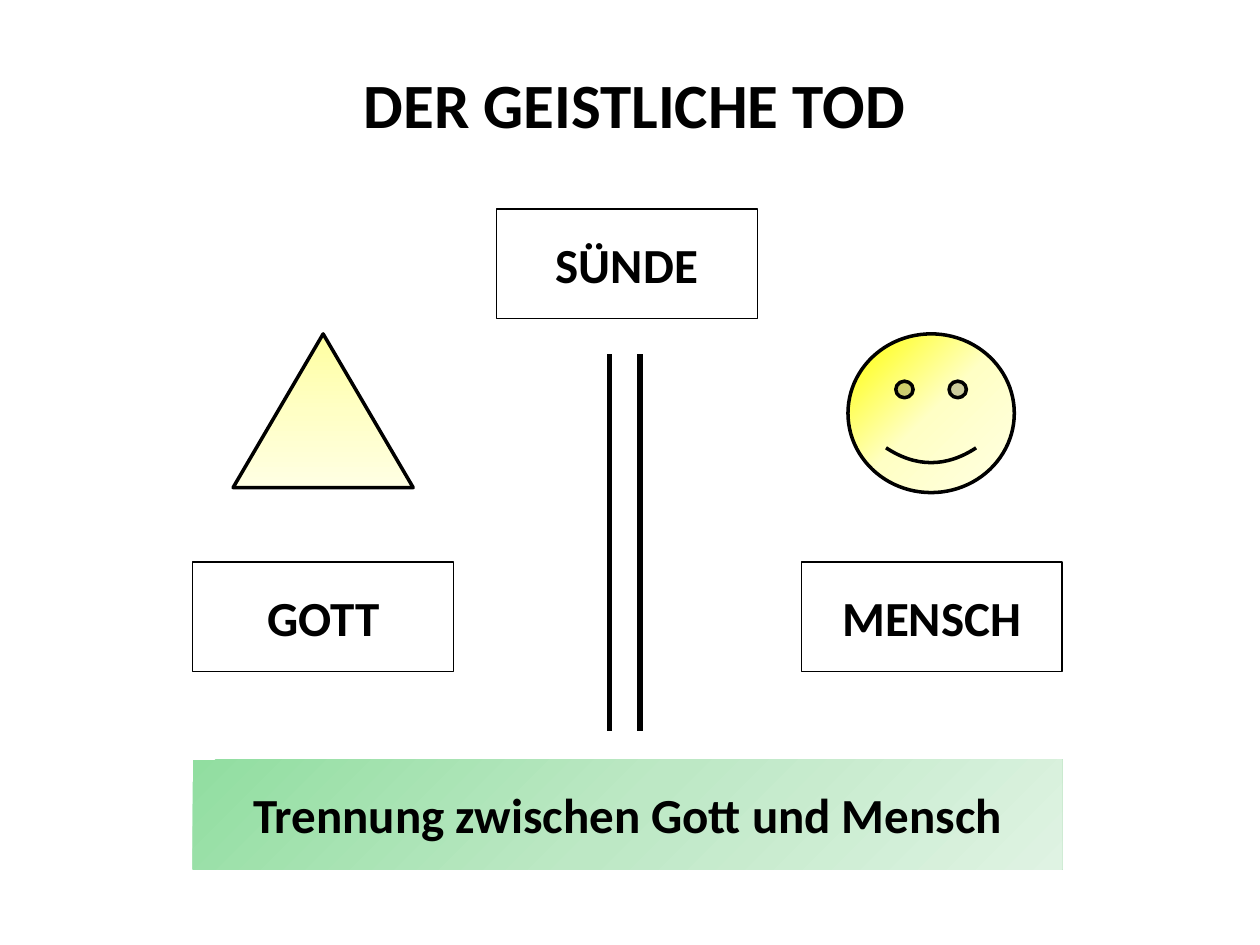
from dataclasses import dataclass
from typing import Optional

from lxml.etree import SubElement
from pptx import Presentation
from pptx.dml.color import RGBColor
from pptx.enum.shapes import MSO_CONNECTOR, MSO_SHAPE
from pptx.enum.text import MSO_ANCHOR, MSO_AUTO_SIZE, PP_ALIGN
from pptx.oxml.ns import qn
from pptx.util import Inches, Pt

COLORS = {"ink": "000000", "paper": "FFFFFF"}
GRADIENTS = {
    "triangle": ("FFFFA0", "FFFFC5", "FFFFE3"),
    "face": ("FFFF00", "FFFFC5", "FFFFE3"),
    "banner": ("91DEA0", "BDE8C5", "DFF3E3"),
}
COLUMNS, ROWS = 100, 75
LABEL_W, LABEL_H = 20.7, 8.7
LEFT, RIGHT = 15.3, 84.3
LABEL_ROW, SYMBOL_ROW = 44.6, 26.5
BAR_TOP, BAR_BOTTOM = 28.1, 58
BAR_COLUMNS = (48.4, 50.8)


@dataclass
class Box:
    col: float
    row: float
    cols: float
    rows: float
    text: str = ""
    shape: MSO_SHAPE = MSO_SHAPE.RECTANGLE
    gradient: Optional[str] = None
    angle: int = 45
    line: float = 0
    size: int = 28
    solid: Optional[str] = None
    inset: float = 0.2
    grow: bool = True


BOXES = [
    Box(4.3, 4.4, 92.1, 6.3, "DER GEISTLICHE TOD", size=36, solid="paper",
        inset=0.08, grow=False),
    Box(LEFT, LABEL_ROW, LABEL_W, LABEL_H, "GOTT", line=0.75),
    Box(18.5, SYMBOL_ROW, 14.3, 12.2, shape=MSO_SHAPE.ISOSCELES_TRIANGLE,
        gradient="triangle", angle=90, line=2),
    Box(67.3, SYMBOL_ROW, 13.2, 12.6, shape=MSO_SHAPE.SMILEY_FACE,
        gradient="face", line=2),
    Box(RIGHT - LABEL_W, LABEL_ROW, LABEL_W, LABEL_H, "MENSCH", line=0.75),
    Box(39.4, 16.6, LABEL_W, LABEL_H, "SÜNDE", line=0.75),
    Box(LEFT, 60.3, RIGHT - LEFT, LABEL_H,
        "Trennung zwischen Gott und Mensch", gradient="banner"),
]


def rgb(name: str) -> RGBColor:
    return RGBColor.from_string(COLORS[name])


def fill_gradient(sp, colors: tuple, angle: int) -> None:
    sp.fill.gradient()
    sp.fill.gradient_angle = 360 - angle
    stops = sp._element.spPr.find(qn("a:gradFill")).find(qn("a:gsLst"))
    for stop in list(stops):
        stops.remove(stop)
    for i, color in enumerate(colors):
        stop = SubElement(stops, qn("a:gs"), pos=str(i * 50000))
        SubElement(stop, qn("a:srgbClr"), val=color)


def write_text(sp, box: Box) -> None:
    tf = sp.text_frame
    tf.word_wrap = True
    tf.vertical_anchor = MSO_ANCHOR.TOP
    tf.margin_top = tf.margin_bottom = Inches(box.inset)
    tf.auto_size = MSO_AUTO_SIZE.SHAPE_TO_FIT_TEXT if box.grow else MSO_AUTO_SIZE.NONE
    p = tf.paragraphs[0]
    p.alignment = PP_ALIGN.CENTER
    r = p.add_run()
    r.text = box.text
    r.font.name = "Calibri"
    r.font.size = Pt(box.size)
    r.font.bold = True
    r.font.color.rgb = rgb("ink")


def draw_box(s, box: Box, cell_w: float, cell_h: float) -> None:
    sp = s.shapes.add_shape(
        box.shape, round(box.col * cell_w), round(box.row * cell_h),
        round(box.cols * cell_w), round(box.rows * cell_h))
    sp.shadow.inherit = False
    if box.gradient:
        fill_gradient(sp, GRADIENTS[box.gradient], box.angle)
    elif box.solid:
        sp.fill.solid()
        sp.fill.fore_color.rgb = rgb(box.solid)
        color = sp._element.spPr.find(qn("a:solidFill"))[0]
        SubElement(color, qn("a:alpha"), val="60000")
    else:
        sp.fill.background()
    if box.line:
        sp.line.color.rgb = rgb("ink")
        sp.line.width = Pt(box.line)
    else:
        sp.line.fill.background()
    if box.text:
        write_text(sp, box)


def draw_bar(s, col: float, cell_w: float, cell_h: float) -> None:
    x = round(col * cell_w)
    bar = s.shapes.add_connector(
        MSO_CONNECTOR.STRAIGHT, x, round(BAR_TOP * cell_h), x, round(BAR_BOTTOM * cell_h))
    bar.line.color.rgb = rgb("ink")
    bar.line.width = Pt(3)
    SubElement(bar._element.spPr, qn("a:effectLst"))


def main() -> None:
    prs = Presentation()
    prs.slide_width, prs.slide_height = Inches(10), Inches(7.5)
    s = prs.slides.add_slide(prs.slide_layouts[6])
    cell_w, cell_h = prs.slide_width / COLUMNS, prs.slide_height / ROWS
    for box in BOXES[:-1]:
        draw_box(s, box, cell_w, cell_h)
    for col in BAR_COLUMNS:
        draw_bar(s, col, cell_w, cell_h)
    draw_box(s, BOXES[-1], cell_w, cell_h)
    prs.save("out.pptx")


if __name__ == "__main__":
    main()
